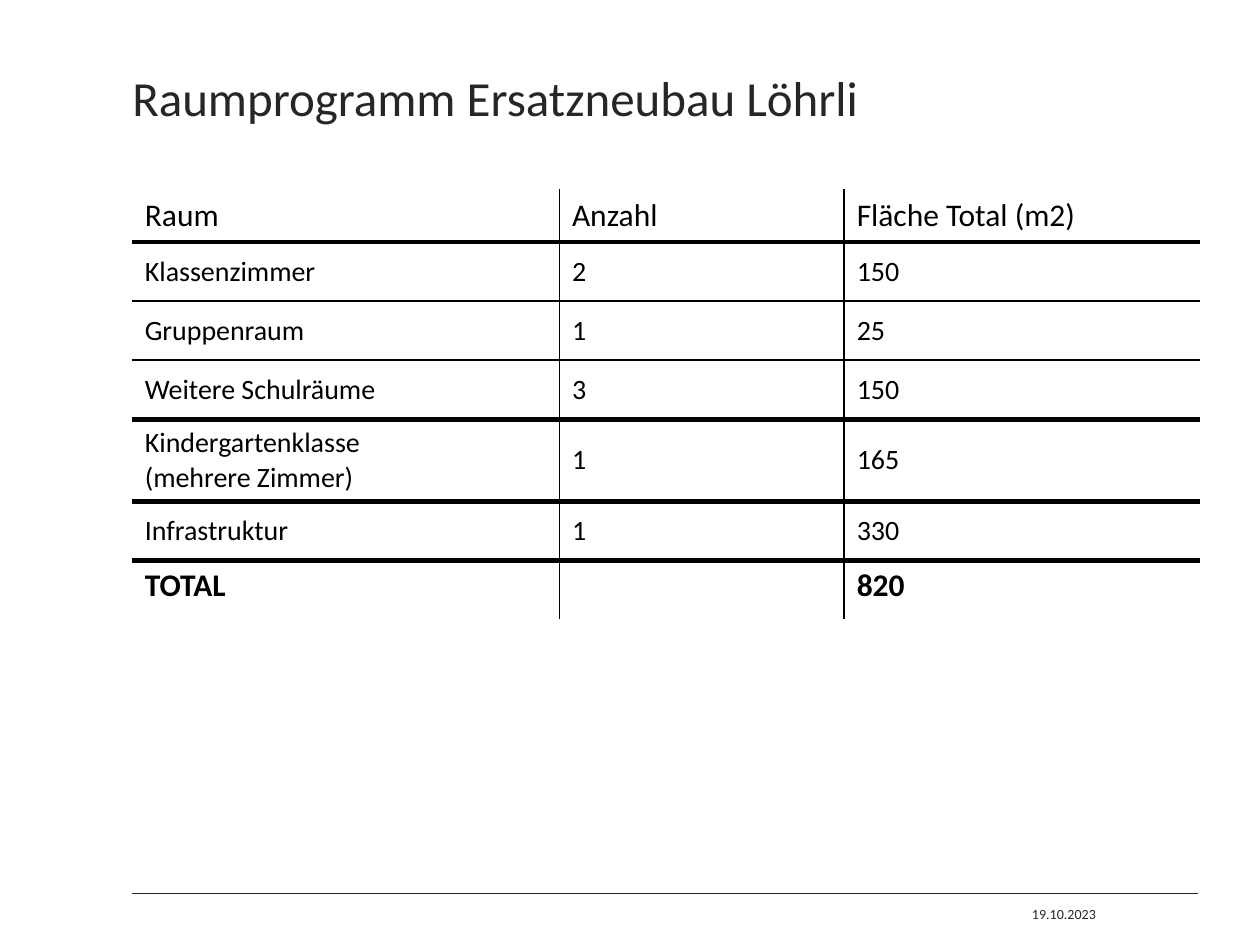
import pptx
import pptx.dml.color
import pptx.enum.shapes
import pptx.enum.text
import pptx.oxml
import pptx.oxml.ns
import pptx.util
from lxml import etree

COLOURS = {"ink": "262626", "black": "000000", "white": "FFFFFF"}
FONT = "Calibri"
COLUMNS, ROWS = 100, 75
LEFT, WIDTH = 10.5, 84.6
MIDDLE = pptx.enum.text.MSO_ANCHOR.MIDDLE
TOP = pptx.enum.text.MSO_ANCHOR.TOP

ROOMS = [
    ("Raum", "Anzahl", "Fläche Total (m2)"),
    ("Klassenzimmer", "2", "150"),
    ("Gruppenraum", "1", "25"),
    ("Weitere Schulräume", "3", "150"),
    ("Kindergartenklasse\v(mehrere Zimmer)", "1", "165"),
    ("Infrastruktur", "1", "330"),
    ("TOTAL", "", "820"),
]
COLUMN_WIDTHS = [33.9, 22.6, 28.2]
ROW_HEIGHTS = [4.1, 4.7, 4.7, 4.7, 6.5, 4.7, 4.7]
# Horizontal rules from the top edge to the bottom edge of the table
OUTER = ("white", 1)
THIN = ("black", 1)
THICK = ("black", 3)
RULES = [OUTER, THICK, THIN, THIN, THICK, THICK, THICK, OUTER]
UPRIGHTS = [OUTER, THIN, THIN, OUTER]


def colour(name):
    return pptx.dml.color.RGBColor.from_string(COLOURS[name])


class SlideBuilder:
    """Places elements on one slide by grid columns and rows."""

    def __init__(self, deck):
        self.page = deck.slides.add_slide(deck.slide_layouts[6])
        self.column = deck.slide_width / COLUMNS
        self.row = deck.slide_height / ROWS

    def across(self, columns):
        return pptx.util.Emu(round(columns * self.column))

    def down(self, rows):
        return pptx.util.Emu(round(rows * self.row))

    def area(self, left, top, width, height):
        return (self.across(left), self.down(top),
                self.across(width), self.down(height))

    def style(self, para, size, ink, bold=False):
        para.font.name = FONT
        para.font.size = pptx.util.Pt(size)
        para.font.bold = bold
        para.font.color.rgb = colour(ink)

    def text(self, words, place, size, inset_top=0, anchor=TOP, spacing=1.0):
        frame = self.page.shapes.add_textbox(*self.area(*place)).text_frame
        frame.word_wrap = True
        frame.vertical_anchor = anchor
        frame.margin_left = 0
        frame.margin_top = self.down(inset_top)
        frame.text = words
        para = frame.paragraphs[0]
        para.line_spacing = spacing
        self.style(para, size, "ink")

    def rule(self, left, top, width):
        line = self.page.shapes.add_connector(
            pptx.enum.shapes.MSO_CONNECTOR.STRAIGHT,
            self.across(left), self.down(top),
            self.across(left + width), self.down(top))
        line.line.color.rgb = colour("ink")
        line.line.width = pptx.util.Pt(0.5)
        etree.SubElement(line._element.spPr, pptx.oxml.ns.qn("a:effectLst"))

    def border(self, cell, sides):
        properties = cell._tc.get_or_add_tcPr()
        for position, (side, (ink, points)) in enumerate(sides.items()):
            properties.insert(position, pptx.oxml.parse_xml(
                f'<a:ln{side} {pptx.oxml.ns.nsdecls("a")} '
                f'w="{pptx.util.Pt(points)}"><a:solidFill>'
                f'<a:srgbClr val="{COLOURS[ink]}"/>'
                f'</a:solidFill></a:ln{side}>'))

    def table(self, left, top):
        place = self.area(left, top, sum(COLUMN_WIDTHS), sum(ROW_HEIGHTS))
        table = self.page.shapes.add_table(
            len(ROOMS), len(COLUMN_WIDTHS), *place).table
        table.first_row = table.horz_banding = False
        for column, width in zip(table.columns, COLUMN_WIDTHS):
            column.width = self.across(width)
        last = len(ROOMS) - 1
        for r, values in enumerate(ROOMS):
            table.rows[r].height = self.down(ROW_HEIGHTS[r])
            body = 0 < r < last
            for c, value in enumerate(values):
                cell = table.cell(r, c)
                cell.text = value
                cell.vertical_anchor = MIDDLE if body else TOP
                cell.fill.background()
                self.style(cell.text_frame.paragraphs[0],
                           16 if body else 18, "black", bold=r == last)
                self.border(cell, {"L": UPRIGHTS[c], "R": UPRIGHTS[c + 1],
                                   "T": RULES[r], "B": RULES[r + 1]})


def main():
    deck = pptx.Presentation()
    deck.slide_width = pptx.util.Inches(10)
    deck.slide_height = pptx.util.Inches(7.5)
    slide = SlideBuilder(deck)
    slide.rule(LEFT, 70.9, WIDTH)
    slide.text("19.10.2023", (81.9, 71.5, 6.2, 2), 8,
               inset_top=0.5, anchor=MIDDLE)
    slide.text("Raumprogramm Ersatzneubau Löhrli", (LEFT, 5.9, WIDTH, 4.3),
               28, spacing=0.9)
    slide.table(LEFT, 15.1)
    deck.save("out.pptx")


if __name__ == "__main__":
    main()
